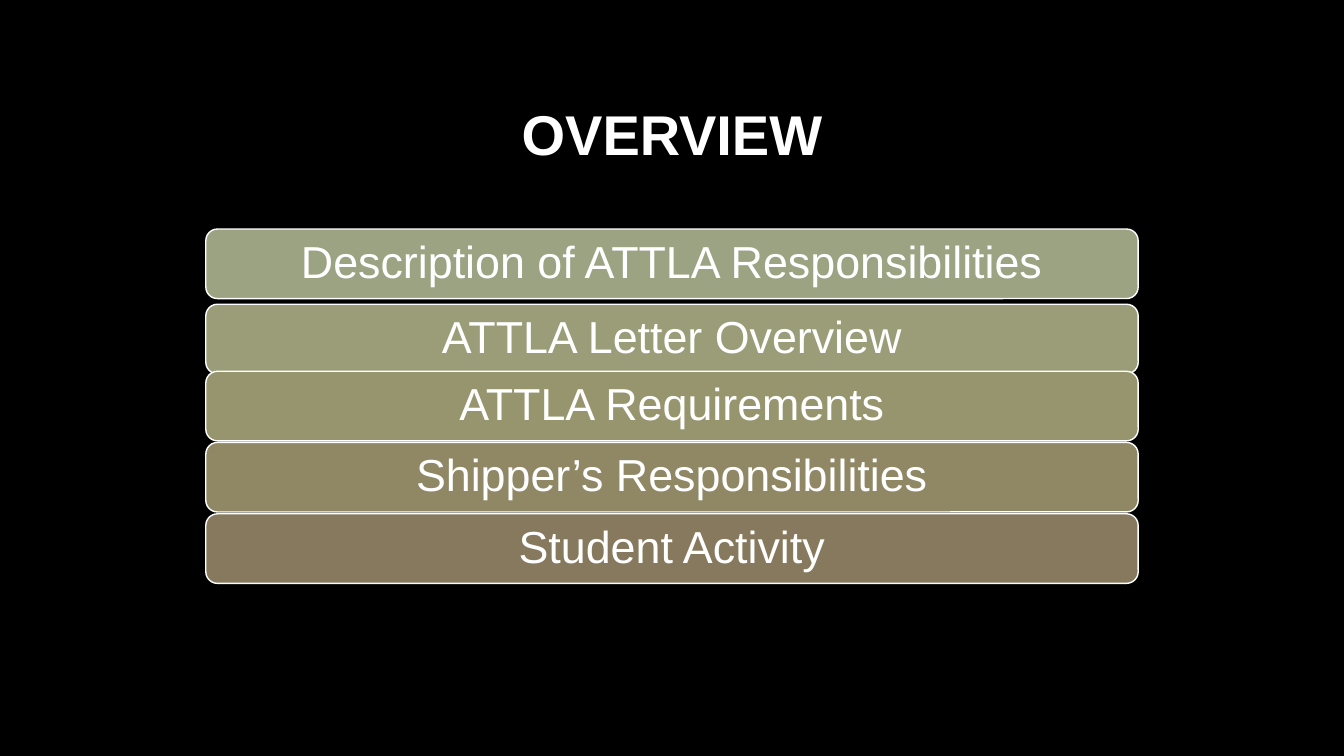
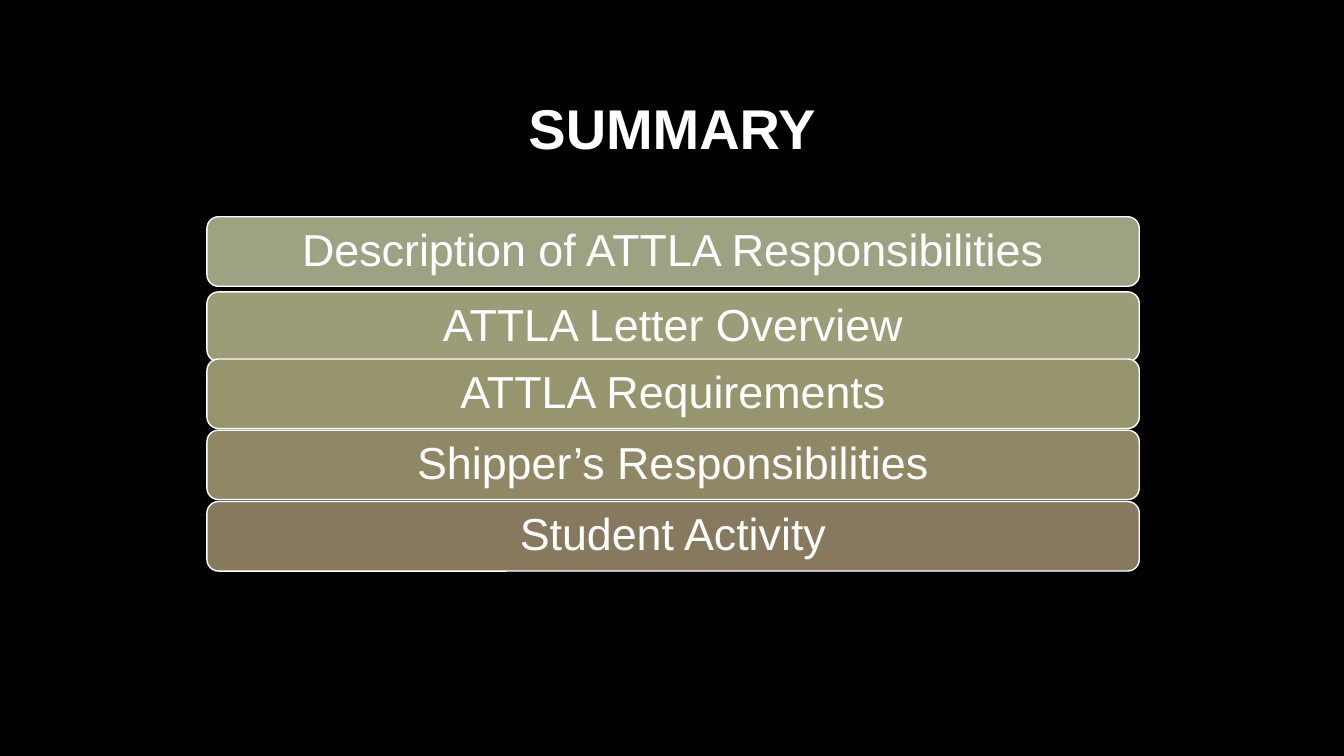
from dataclasses import dataclass

from pptx import Presentation
from pptx.dml.color import RGBColor
from pptx.enum.shapes import MSO_SHAPE
from pptx.enum.text import MSO_ANCHOR, MSO_AUTO_SIZE, PP_ALIGN
from pptx.util import Pt


@dataclass(frozen=True)
class Theme:
    background: RGBColor = RGBColor.from_string("000000")
    text: RGBColor = RGBColor.from_string("FFFFFF")
    font: str = "Arial"
    title_size: int = 40
    bar_size: int = 32


theme = Theme()

# Bars: label, fill, distance below the first bar
BARS = [
    ("Description of ATTLA Responsibilities", "9CA383", 0),
    ("ATTLA Letter Overview", "9A9D78", 53.7),
    ("ATTLA Requirements", "97956E", 101.6),
    ("Shipper’s Responsibilities", "908765", 152.4),
    ("Student Activity", "87795D", 203.4),
]
BAR_WIDTH, BAR_HEIGHT = 666, 49.7

# Slides: title, title top, left of the bars, top of the first bar
SLIDES = [
    ("OVERVIEW", 67.7, 147, 163.6),
    ("SUMMARY", 63.4, 147.8, 154.8),
]


def format_paragraph(p, size, bold=False):
    p.alignment = PP_ALIGN.CENTER
    p.font.name = theme.font
    p.font.size = Pt(size)
    p.font.bold = bold
    p.font.color.rgb = theme.text


prs = Presentation()
prs.slide_width, prs.slide_height = Pt(960), Pt(540)

# Shared background
fill = prs.slide_master.background.fill
fill.solid()
fill.fore_color.rgb = theme.background

for title, title_top, left, top in SLIDES:
    slide = prs.slides.add_slide(prs.slide_layouts.get_by_name("Title Only"))

    # Title
    sp = slide.shapes.title
    sp.left, sp.top, sp.width, sp.height = Pt(120), Pt(title_top), Pt(720), Pt(55.4)
    tf = sp.text_frame
    tf.text = title
    tf.vertical_anchor = MSO_ANCHOR.TOP
    tf.auto_size = MSO_AUTO_SIZE.NONE
    format_paragraph(tf.paragraphs[0], theme.title_size, bold=True)

    # Topic bars
    for label, color, offset in BARS:
        sp = slide.shapes.add_shape(
            MSO_SHAPE.ROUNDED_RECTANGLE,
            Pt(left), Pt(top + offset), Pt(BAR_WIDTH), Pt(BAR_HEIGHT),
        )
        sp.shadow.inherit = False
        sp.fill.solid()
        sp.fill.fore_color.rgb = RGBColor.from_string(color)
        sp.line.color.rgb = theme.text
        sp.line.width = Pt(1)
        tf = sp.text_frame
        tf.text = label
        tf.word_wrap = True
        tf.vertical_anchor = MSO_ANCHOR.MIDDLE
        tf.margin_left = tf.margin_right = Pt(12)
        tf.margin_top = tf.margin_bottom = Pt(0)
        p = tf.paragraphs[0]
        p.line_spacing = 0.9
        format_paragraph(p, theme.bar_size)

prs.save("out.pptx")
